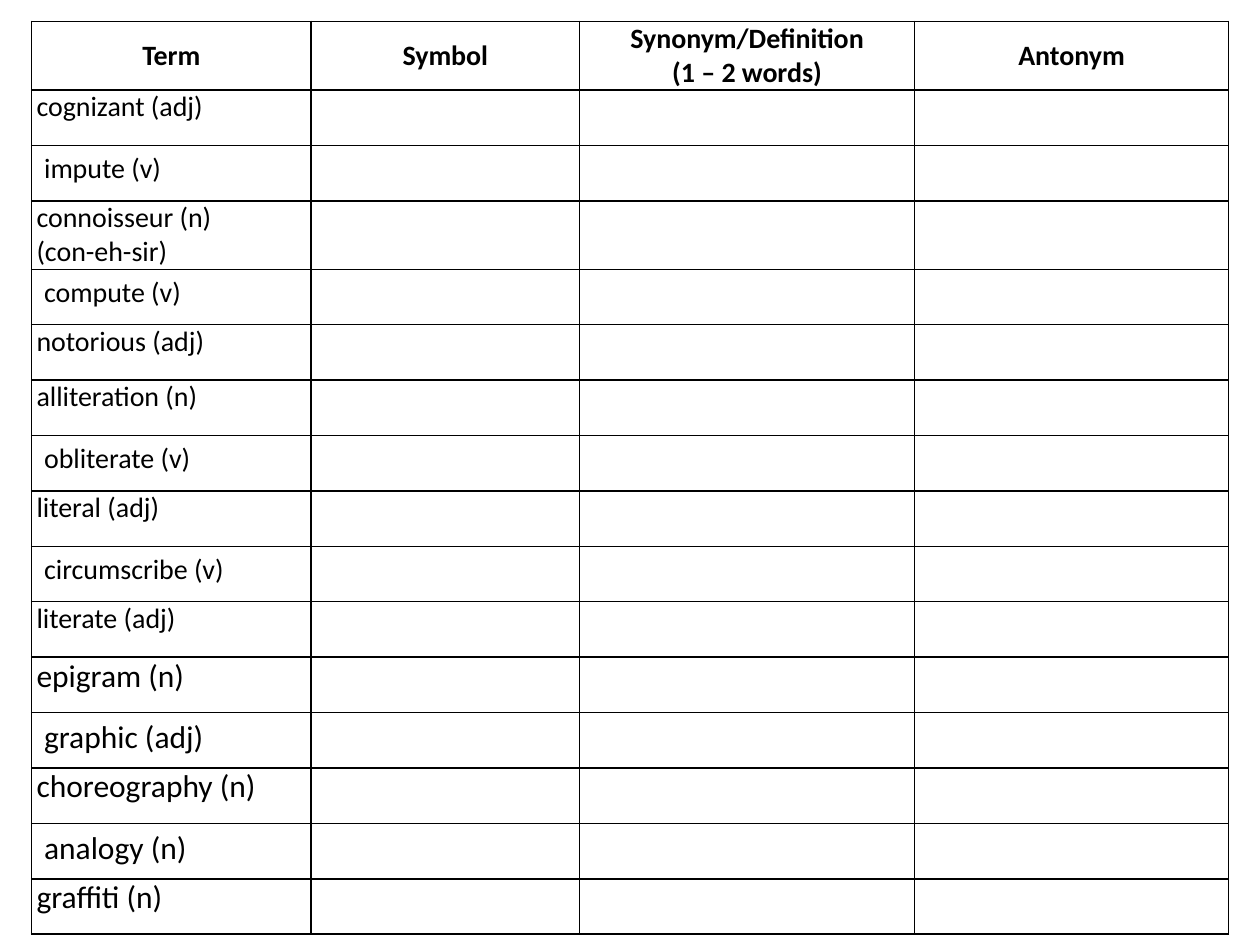
from lxml.etree import SubElement
from pptx import Presentation
from pptx.dml.color import RGBColor
from pptx.enum.text import MSO_ANCHOR as Anchor, PP_ALIGN as Align
from pptx.oxml import parse_xml
from pptx.oxml.ns import nsdecls, qn
from pptx.util import Inches, Pt

BLACK = RGBColor(0x00, 0x00, 0x00)
FONT = "Calibri"
HEADINGS = ["Term", "Symbol", "Synonym/Definition\n(1 – 2 words)", "Antonym"]
TERMS = [
    "cognizant (adj)", "impute (v)", "connoisseur (n)\n(con-eh-sir)",
    "compute (v)", "notorious (adj)", "alliteration (n)", "obliterate (v)",
    "literal (adj)", "circumscribe (v)", "literate (adj)", "epigram (n)",
    "graphic (adj)", "choreography (n)", "analogy (n)", "graffiti (n)",
]
INDENTED = {"impute (v)", "compute (v)", "obliterate (v)",
            "circumscribe (v)", "graphic (adj)", "analogy (n)"}
FIRST_LARGE = TERMS.index("epigram (n)")
COLUMN_WIDTHS = [2.22, 2.13, 2.66, 2.49]
ROW_HEIGHT, TWO_LINE_HEIGHT = 0.44, 0.54


class VocabularySheet:
    """Hold the style and current page of a vocabulary worksheet."""

    def __init__(self, deck):
        self.page = deck.slides.add_slide(deck.slide_layouts[6])

    def add_grid(self, left, top, widths, heights):
        frame = self.page.shapes.add_table(
            len(heights), len(widths), Inches(left), Inches(top),
            Inches(sum(widths)), Inches(sum(heights)))
        table = frame.table
        table.first_row = table.horz_banding = False
        for column, width in zip(table.columns, widths):
            column.width = Inches(width)
        for row, height in zip(table.rows, heights):
            row.height = Inches(height)
        for cell in table.iter_cells():
            cell.fill.background()
            self.add_borders(cell)
        return table

    def add_borders(self, cell):
        properties = cell._tc.get_or_add_tcPr()
        for position, side in enumerate(("lnL", "lnR", "lnT", "lnB")):
            line = parse_xml(f'<a:{side} {nsdecls("a")} w="{Pt(1)}"/>')
            fill = SubElement(line, qn("a:solidFill"))
            SubElement(fill, qn("a:srgbClr"), val=str(BLACK))
            properties.insert(position, line)

    def set_text(self, cell, text, size=16, bold=False, align=Align.LEFT):
        cell.text = text
        for para in cell.text_frame.paragraphs:
            para.alignment = align
            para.font.name = FONT
            para.font.size = Pt(size)
            para.font.bold = bold
            para.font.color.rgb = BLACK

    def set_margins(self, cell, side):
        cell.margin_left = cell.margin_right = Inches(side)
        cell.margin_top = cell.margin_bottom = 0

    def add_heading(self, cell, text):
        self.set_text(cell, text, bold=True, align=Align.CENTER)
        self.set_margins(cell, 0.07)
        cell.vertical_anchor = Anchor.MIDDLE

    def add_term(self, cell, text, size):
        self.set_text(cell, text, size)
        if text not in INDENTED:
            self.set_margins(cell, 0.04)


def main():
    deck = Presentation()
    deck.slide_width, deck.slide_height = Inches(10), Inches(7.5)
    sheet = VocabularySheet(deck)
    heights = [TWO_LINE_HEIGHT] + [
        TWO_LINE_HEIGHT if "\n" in term else ROW_HEIGHT for term in TERMS]
    table = sheet.add_grid(0.25, 0.17, COLUMN_WIDTHS, heights)
    for column, heading in enumerate(HEADINGS):
        sheet.add_heading(table.cell(0, column), heading)
    for index, term in enumerate(TERMS):
        size = 18 if index >= FIRST_LARGE else 16
        sheet.add_term(table.cell(index + 1, 0), term, size)
    deck.save("out.pptx")


if __name__ == "__main__":
    main()
